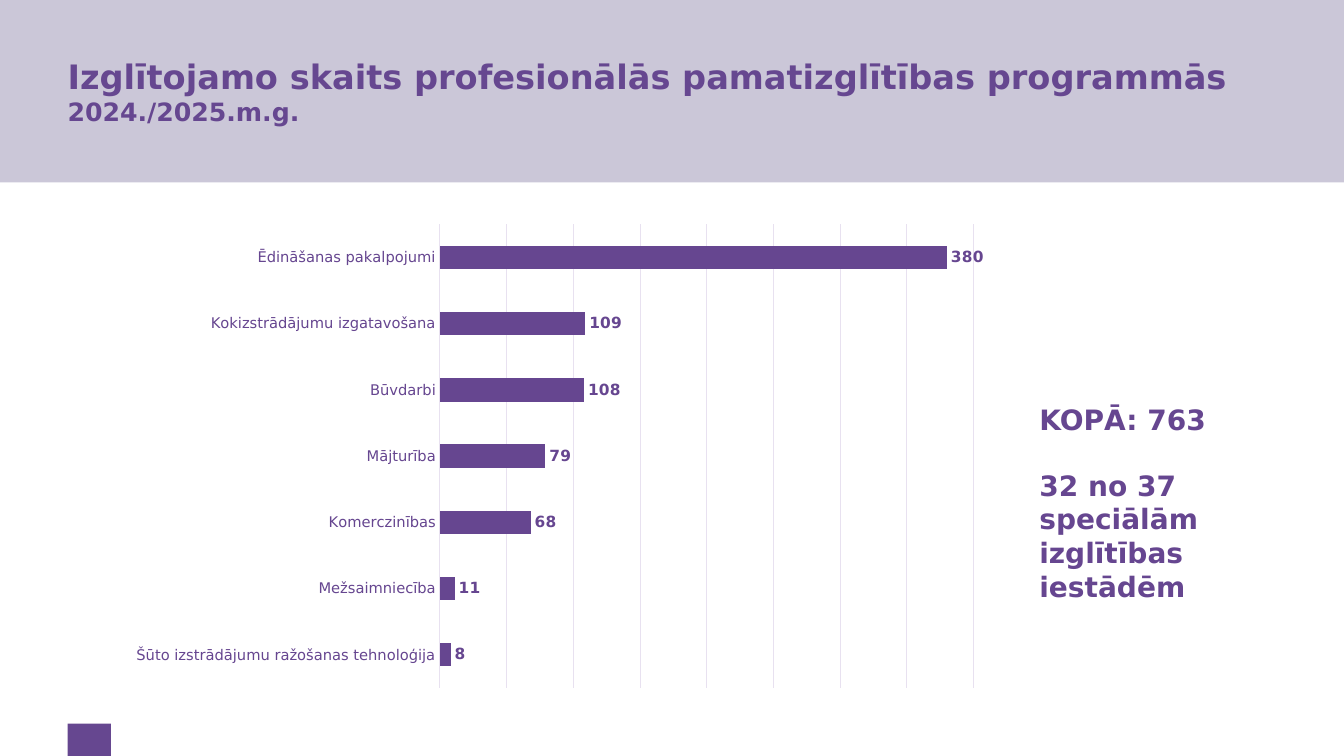
from dataclasses import dataclass

from pptx import Presentation
from pptx.chart.data import CategoryChartData
from pptx.dml.color import RGBColor
from pptx.enum.chart import XL_CHART_TYPE, XL_LABEL_POSITION, XL_TICK_MARK
from pptx.enum.shapes import MSO_SHAPE
from pptx.enum.text import MSO_ANCHOR, MSO_AUTO_SIZE, PP_ALIGN
from pptx.util import Inches, Pt


@dataclass(frozen=True)
class Theme:
    face: str = "DejaVu Sans"
    accent: str = "664790"
    ink: str = "664690"
    band: str = "CBC7D8"
    grid: str = "E8E1F0"
    title: float = 24
    sub: float = 18
    side: float = 20
    gap: float = 23.3
    base: float = 10
    axis: float = 10.5
    label: float = 11


class Deck:
    def __init__(self, theme):
        self.theme = theme
        self.file = Presentation()
        self.file.slide_width = Inches(13.33)
        self.file.slide_height = Inches(7.5)
        self.slide = self.file.slides.add_slide(self.file.slide_layouts[5])

    def style(self, font, size, color, bold=False):
        font.name = self.theme.face
        font.size = Pt(size)
        font.bold = bold
        font.color.rgb = RGBColor.from_string(color)

    def block(self, box, color):
        shape = self.slide.shapes.add_shape(MSO_SHAPE.RECTANGLE, *map(Inches, box))
        shape.shadow.inherit = False
        shape.fill.solid()
        shape.fill.fore_color.rgb = RGBColor.from_string(color)
        shape.line.fill.background()

    def title(self, box, head, sub):
        shape = self.slide.shapes.title
        # Bring the title in front of the band
        self.slide.shapes._spTree.append(shape._element)
        shape.left, shape.top, shape.width, shape.height = map(Inches, box)
        frame = shape.text_frame
        frame.word_wrap = True
        frame.auto_size = MSO_AUTO_SIZE.NONE
        frame.vertical_anchor = MSO_ANCHOR.MIDDLE
        frame.margin_left = 0
        frame.margin_right = Inches(0.1)
        frame.margin_top = frame.margin_bottom = Inches(0.05)
        frame.text = head
        para = frame.paragraphs[0]
        para.alignment = PP_ALIGN.LEFT
        para.add_run().text = sub
        for run, size in zip(para.runs, (self.theme.title, self.theme.sub)):
            self.style(run.font, size, self.theme.accent, True)

    def note(self, box, lines):
        frame = self.slide.shapes.add_textbox(*map(Inches, box)).text_frame
        frame.word_wrap = True
        frame.auto_size = MSO_AUTO_SIZE.SHAPE_TO_FIT_TEXT
        frame.text = "\n".join(lines)
        for para in frame.paragraphs:
            self.style(para.runs[0].font, self.theme.side, self.theme.ink, True)
        frame.paragraphs[1].space_before = Pt(self.theme.gap)

    def bars(self, box, rows):
        look = self.theme
        data = CategoryChartData()
        data.categories = [name for name, _ in rows]
        data.add_series("Series 1", [count for _, count in rows])
        chart = self.slide.shapes.add_chart(
            XL_CHART_TYPE.BAR_CLUSTERED, *map(Inches, box), data).chart
        chart.has_legend = False
        chart.has_title = False
        self.style(chart.font, look.base, look.ink)

        # Axes
        cats, vals = chart.category_axis, chart.value_axis
        cats.major_tick_mark = cats.minor_tick_mark = XL_TICK_MARK.NONE
        cats.has_major_gridlines = False
        self.style(cats.tick_labels.font, look.axis, look.ink)
        vals.visible = False
        vals.minimum_scale, vals.maximum_scale, vals.major_unit = 0, 400, 50
        vals.has_major_gridlines = True
        for line in (cats.format.line, vals.major_gridlines.format.line):
            line.color.rgb = RGBColor.from_string(look.grid)
            line.width = Pt(0.75)

        # Bars and their labels
        plot = chart.plots[0]
        plot.gap_width = 182
        plot.vary_by_categories = False
        series = plot.series[0]
        series.format.fill.solid()
        series.format.fill.fore_color.rgb = RGBColor.from_string(look.ink)
        labels = series.data_labels
        labels.show_value = True
        labels.position = XL_LABEL_POSITION.OUTSIDE_END
        self.style(labels.font, look.label, look.ink, True)


def main():
    theme = Theme()
    deck = Deck(theme)

    # Corner mark and header band
    deck.block((0.67, 7.18, 0.43, 0.32), theme.accent)
    deck.block((0, 0, 13.33, 1.81), theme.band)
    deck.title((0.67, 0.28, 11.84, 1.25),
               "Izglītojamo skaits profesionālās pamatizglītības programmās ",
               "2024./2025.m.g.")

    # Totals
    deck.note((10.21, 3.94, 2.45, 2.12),
              ["KOPĀ: 763", "32 no 37", "speciālām", "izglītības", "iestādēm"])

    # Learners by programme, from the bottom up
    deck.bars((1.18, 2.13, 8.65, 4.79), [
        ("Šūto izstrādājumu ražošanas tehnoloģija", 8),
        ("Mežsaimniecība", 11),
        ("Komerczinības", 68),
        ("Mājturība", 79),
        ("Būvdarbi", 108),
        ("Kokizstrādājumu izgatavošana", 109),
        ("Ēdināšanas pakalpojumi", 380),
    ])
    deck.file.save("out.pptx")


if __name__ == "__main__":
    main()
